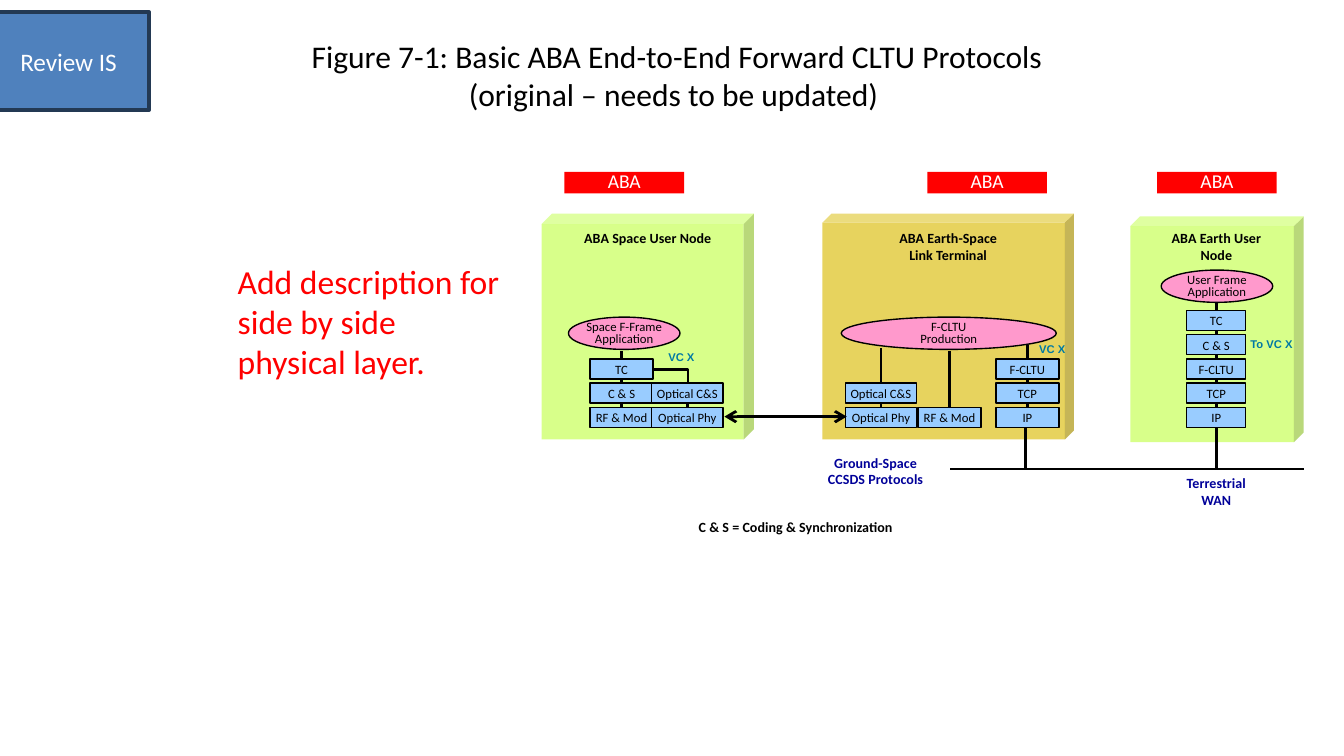
from lxml import etree
from pptx import Presentation
from pptx.dml.color import RGBColor
from pptx.enum.shapes import MSO_CONNECTOR, MSO_SHAPE
from pptx.enum.text import MSO_ANCHOR, PP_ALIGN
from pptx.oxml.ns import qn
from pptx.util import Inches, Pt

COLORS = {
    "black": "000000", "white": "FFFFFF", "red": "FF0000", "green": "CCFF66",
    "gold": "E0C62C", "layer": "99CCFF", "app": "FF99CC", "teal": "0079A4",
    "navy": "000099", "badge": "4F81BD", "badge_edge": "233953",
}
ROW_H, ROW_STEP = 0.15, 0.18
BASE_ROW = 1.44  # bottom protocol layer, below the top of a node


def rgb(name):
    return RGBColor.from_string(COLORS[name])


def write(sp, text, size, color="black", bold=False, font="Calibri",
          align=PP_ALIGN.CENTER, anchor=MSO_ANCHOR.TOP, wrap=True,
          inset=(0.1, 0.05), spacing=None):
    """Fill a shape with one paragraph per line of text."""
    tf = sp.text_frame
    tf.word_wrap = wrap
    tf.vertical_anchor = anchor
    tf.margin_left = tf.margin_right = Inches(inset[0])
    tf.margin_top = tf.margin_bottom = Inches(inset[1])
    for i, line_text in enumerate(text.split("\n")):
        p = tf.add_paragraph() if i else tf.paragraphs[0]
        p.text = line_text
        p.alignment = align
        p.line_spacing = spacing
        p.font.name, p.font.size, p.font.bold = font, Pt(size), bold
        p.font.color.rgb = rgb(color)


def label(s, x, y, w, h, text, size=7.5, **style):
    sp = s.shapes.add_textbox(Inches(x), Inches(y), Inches(w), Inches(h))
    write(sp, text, size, **style)


def channel_label(s, x, y, w, text):
    label(s, x, y, w, 0.2, text, 6, color="teal", bold=True, font="Arial", wrap=False)


def block(s, kind, x, y, w, h, fill, edge=None, edge_width=0.75):
    sp = s.shapes.add_shape(kind, Inches(x), Inches(y), Inches(w), Inches(h))
    sp.shadow.inherit = False
    sp.fill.solid()
    sp.fill.fore_color.rgb = rgb(fill)
    if edge:
        sp.line.color.rgb = rgb(edge)
        sp.line.width = Pt(edge_width)
    else:
        sp.line.fill.background()
    return sp


def line(s, x1, y1, x2, y2, kind=MSO_CONNECTOR.STRAIGHT, arrows=False):
    c = s.shapes.add_connector(kind, Inches(x1), Inches(y1), Inches(x2), Inches(y2))
    c.line.color.rgb = rgb("black")
    c.line.width = Pt(1.5)
    if arrows:
        ln = c.line._get_or_add_ln()
        for end in ("a:headEnd", "a:tailEnd"):
            etree.SubElement(ln, qn(end)).set("type", "arrow")
    etree.SubElement(c._element.spPr, qn("a:effectLst"))
    return c


def node_box(s, x, y, w, h, depth, fill):
    """Translucent cube that holds a protocol stack."""
    sp = block(s, MSO_SHAPE.CUBE, x, y, w, h, fill)
    sp.adjustments[0] = depth
    color = sp.fill._xPr.find(qn("a:solidFill"))[0]
    etree.SubElement(color, qn("a:alpha")).set("val", "76000")


def banner(s, x, y):
    sp = block(s, MSO_SHAPE.RECTANGLE, x, y, 0.89, 0.16, "red")
    write(sp, "ABA", 10.5, "white", anchor=MSO_ANCHOR.MIDDLE, spacing=0.8)
    p = sp.text_frame.paragraphs[0]
    p.space_before = p.space_after = Pt(1)


def application(s, x, y, w, text):
    sp = block(s, MSO_SHAPE.OVAL, x, y, w, 0.24, "app", "black")
    write(sp, text, 6.8, inset=(0, 0), spacing=0.8)


def stack(s, x, base, w, layers, line_top):
    """Protocol layers, listed from the bottom up, on a vertical line."""
    line(s, x + w / 2, line_top, x + w / 2, base)
    for i, name in enumerate(layers):
        sp = block(s, MSO_SHAPE.RECTANGLE, x, base - i * ROW_STEP, w, ROW_H,
                   "layer", "black")
        write(sp, name, 6.8, inset=(0.03, 0.02))


def space_user_node(s, x, y):
    base = y + BASE_ROW
    node_box(s, x, y, 1.58, 1.68, 0.049, "green")
    banner(s, x + 0.17, y - 0.31)
    label(s, x, y + 0.07, 1.58, 0.23, "ABA Space User Node", bold=True)
    channel_label(s, x + 0.84, y + 0.97, 0.4, "VC X")
    bend = line(s, x + 0.82, y + 1.16, x + 1.09, y + 1.26, MSO_CONNECTOR.ELBOW)
    bend._element.spPr.find(qn("a:prstGeom")).set("prst", "bentConnector2")
    stack(s, x + 0.36, base, 0.47, ["RF & Mod", "C & S", "TC"], y + 1.02)
    stack(s, x + 0.82, base, 0.53, ["Optical Phy", "Optical C&S"], y + 1.41)
    application(s, x + 0.2, y + 0.77, 0.83, "Space F-Frame\nApplication")


def link_terminal(s, x, y):
    base = y + BASE_ROW
    node_box(s, x, y, 1.87, 1.68, 0.04, "gold")
    banner(s, x + 0.78, y - 0.31)
    label(s, x, y + 0.07, 1.87, 0.35, "ABA Earth-Space\nLink Terminal", bold=True)
    channel_label(s, x + 1.51, y + 0.91, 0.4, "VC X")
    stack(s, x + 0.17, base, 0.53, ["Optical Phy", "Optical C&S"], y + 1)
    stack(s, x + 0.71, base, 0.47, ["RF & Mod"], y + 1.02)
    stack(s, x + 1.29, base, 0.47, ["IP", "TCP", "F-CLTU"], y + 0.98)
    application(s, x + 0.14, y + 0.77, 1.6, "F-CLTU\nProduction")


def earth_user_node(s, x, y):
    node_box(s, x, y + 0.02, 1.29, 1.68, 0.056, "green")
    banner(s, x + 0.2, y - 0.31)
    label(s, x + 0.18, y + 0.07, 0.92, 0.35, "ABA Earth User Node", bold=True)
    channel_label(s, x + 0.79, y + 0.87, 0.52, "To VC X")
    stack(s, x + 0.42, y + BASE_ROW, 0.44, ["IP", "TCP", "F-CLTU", "C & S", "TC"],
          y + 0.66)
    application(s, x + 0.23, y + 0.42, 0.83, "User Frame\nApplication")


def links(s, x, y):
    """Space link arrow and the terrestrial network below the nodes."""
    line(s, x, y, x + 0.91, y, arrows=True)
    wan_y = y + 0.39
    line(s, x + 1.68, wan_y, x + 4.31, wan_y)
    for drop in (2.24, 3.66):
        line(s, x + drop, y + 0.08, x + drop, wan_y)
    label(s, x + 0.64, y + 0.23, 0.97, 0.35, "Ground-Space\nCCSDS Protocols",
          color="navy", bold=True)
    label(s, x + 3.23, y + 0.38, 0.86, 0.35, "Terrestrial\nWAN",
          color="navy", bold=True)
    label(s, x - 0.29, y + 0.71, 1.65, 0.23, "C & S = Coding & Synchronization",
          bold=True, align=PP_ALIGN.LEFT, wrap=False)


def heading(s):
    label(s, 1.85, 0.25, 6.38, 0.62,
          "Figure 7-1: Basic ABA End-to-End Forward CLTU Protocols "
          "(original – needs to be updated) ", 16.9,
          anchor=MSO_ANCHOR.MIDDLE, inset=(0.07, 0.04))
    sp = block(s, MSO_SHAPE.RECTANGLE, -0.09, 0.09, 1.2, 0.73, "badge", "badge_edge", 2)
    write(sp, "Review IS", 13.5, "white", anchor=MSO_ANCHOR.MIDDLE)


def main():
    prs = Presentation()
    prs.slide_width = Inches(10)
    prs.slide_height = prs.slide_width * 9 // 16
    s = prs.slides.add_slide(prs.slide_layouts[6])
    heading(s)
    label(s, 1.67, 1.89, 2.15, 1.01, "Add description for side by side physical layer.",
          18, color="red", align=PP_ALIGN.LEFT)
    top = 1.59
    space_user_node(s, 4.03, top)
    link_terminal(s, 6.12, top)
    earth_user_node(s, 8.41, top)
    links(s, 5.39, 3.1)
    prs.save("out.pptx")


if __name__ == "__main__":
    main()
